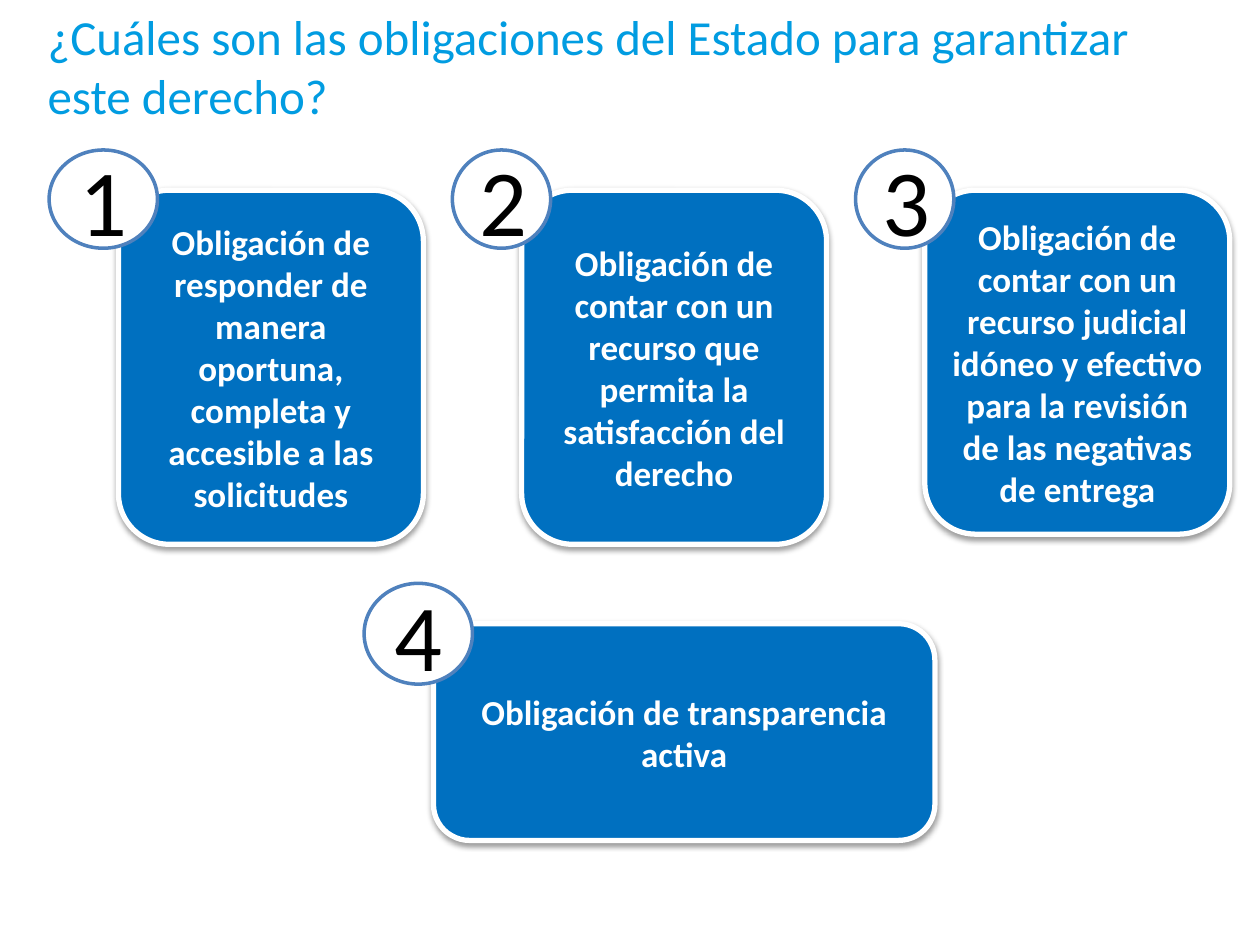
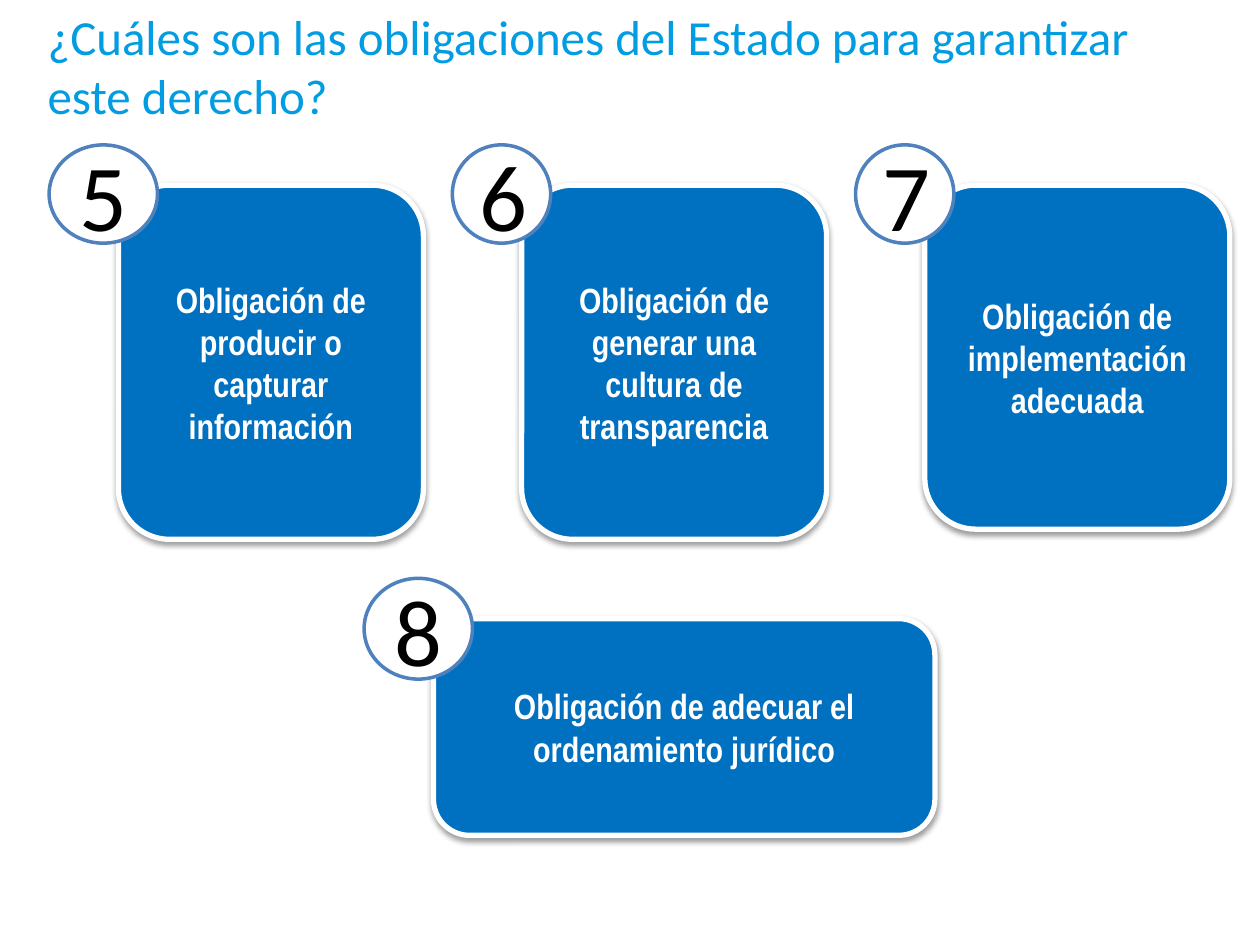
from pptx import Presentation
from pptx.dml.color import RGBColor
from pptx.enum.shapes import MSO_SHAPE
from pptx.enum.text import MSO_ANCHOR, PP_ALIGN
from pptx.oxml import parse_xml
from pptx.oxml.ns import nsdecls, qn
from pptx.util import Inches, Pt

TITLE_BLUE = RGBColor(0x01, 0x9C, 0xE1)
CARD_BLUE = RGBColor(0x00, 0x70, 0xC0)
RING_BLUE = RGBColor(0x4F, 0x81, 0xBD)
WHITE = RGBColor(0xFF, 0xFF, 0xFF)
BLACK = RGBColor(0x00, 0x00, 0x00)

TITLE = "¿Cuáles son las obligaciones del Estado para garantizar este derecho?"
SHADOW = (
    f'<a:outerShdw {nsdecls("a")} blurRad="40000" dist="20000" dir="5400000" rotWithShape="0">'
    '<a:srgbClr val="000000"><a:alpha val="38000"/></a:srgbClr></a:outerShdw>'
)

# Top of the first row, card font, first number, card texts
SLIDES = [
    (1.19, "Calibri", 1, [
        "Obligación de responder de manera oportuna, completa y accesible a las solicitudes",
        "Obligación de contar con un recurso que permita la satisfacción del derecho",
        "Obligación de contar con un recurso judicial idóneo y efectivo para la revisión "
        "de las negativas de entrega",
        "Obligación de transparencia activa",
    ]),
    (1.15, "Arial Narrow", 5, [
        "Obligación de producir o capturar información",
        "Obligación de generar una cultura de transparencia",
        "Obligación de implementación adecuada",
        "Obligación de adecuar el ordenamiento jurídico",
    ]),
]

# Card left, offset below the row top, width, height; circle width, height
LAYOUT = [
    (0.94, 0, 2.42, 2.81, 0.86, 0.78),
    (4.14, 0, 2.42, 2.81, 0.78, 0.78),
    (7.34, 0, 2.42, 2.73, 0.78, 0.78),
    (3.44, 3.44, 3.98, 1.72, 0.86, 0.8),
]
CARD_SHIFT_X, CARD_SHIFT_Y = 0.55, 0.32  # card corner relative to its circle


def write(sp, text, font, size, color, bold=False):
    tf = sp.text_frame
    tf.word_wrap = True
    p = tf.paragraphs[0]
    p.text = text
    p.font.name = font
    p.font.size = Pt(size)
    p.font.bold = bold
    p.font.color.rgb = color
    return tf


def add_label(s, kind, box, fill, line, line_width, *text_style):
    """Add a filled, outlined shape with centred text."""
    sp = s.shapes.add_shape(kind, *map(Inches, box))
    sp.shadow.inherit = False
    sp.fill.solid()
    sp.fill.fore_color.rgb = fill
    sp.line.color.rgb = line
    sp.line.width = Pt(line_width)
    tf = write(sp, *text_style)
    tf.vertical_anchor = MSO_ANCHOR.MIDDLE
    tf.paragraphs[0].alignment = PP_ALIGN.CENTER
    return sp


prs = Presentation()
prs.slide_width = Inches(10)
prs.slide_height = Inches(7.5)

for top, card_font, first, texts in SLIDES:
    s = prs.slides.add_slide(prs.slide_layouts[6])
    title = s.shapes.add_textbox(Inches(0.28), Inches(0), Inches(9.47), Inches(0.68))
    write(title, TITLE, "Calibri", 28, TITLE_BLUE)

    for number, (text, place) in enumerate(zip(texts, LAYOUT), first):
        left, offset, width, height, circle_width, circle_height = place
        y = top + offset
        card = add_label(s, MSO_SHAPE.ROUNDED_RECTANGLE,
                         (left, y + CARD_SHIFT_Y, width, height),
                         CARD_BLUE, WHITE, 3, text, card_font, 20, WHITE, True)
        card._element.spPr.find(qn("a:effectLst")).append(parse_xml(SHADOW))
        add_label(s, MSO_SHAPE.OVAL,
                  (left - CARD_SHIFT_X, y, circle_width, circle_height),
                  WHITE, RING_BLUE, 2, str(number), "Calibri", 54, BLACK)

prs.save("out.pptx")
